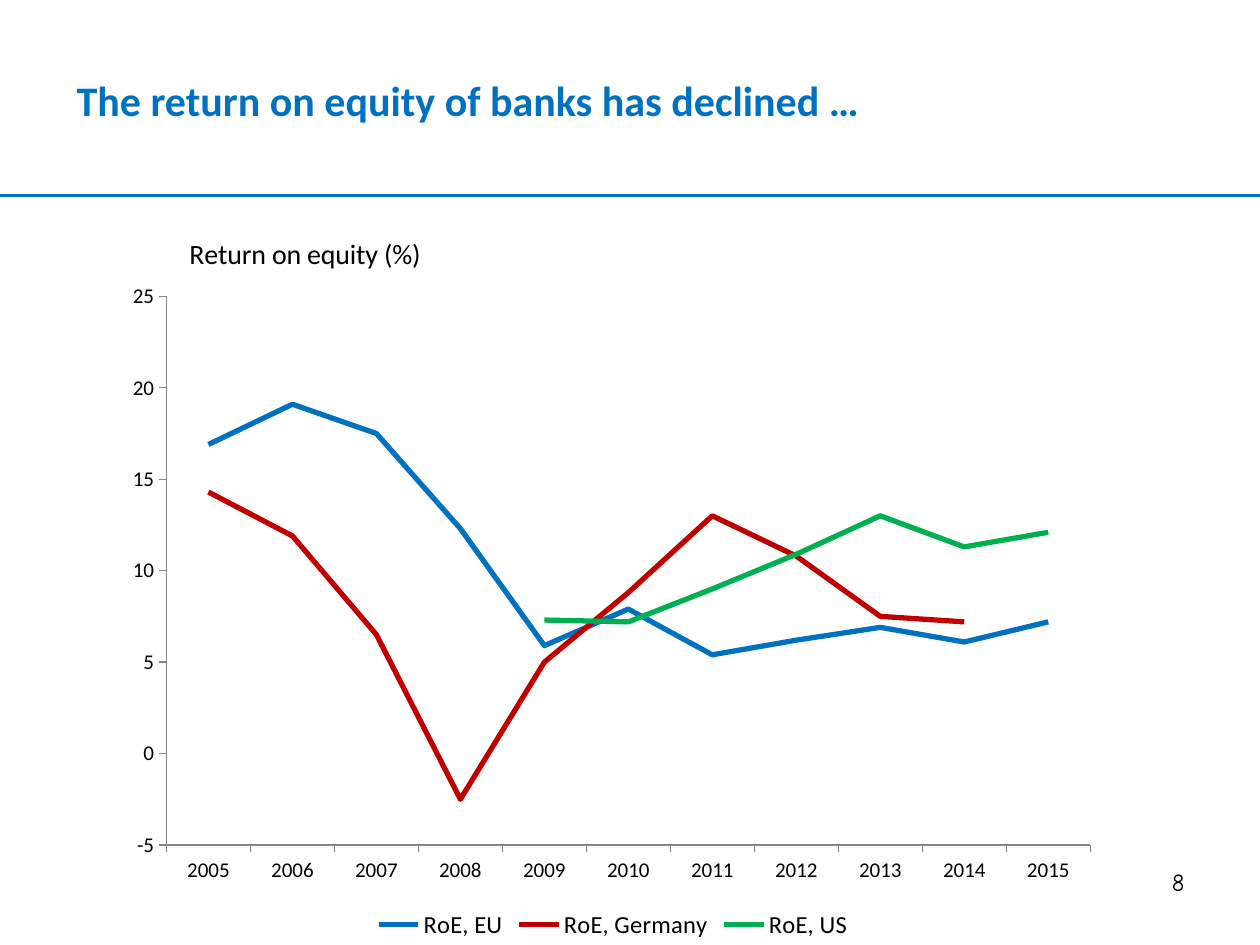
from dataclasses import dataclass

from lxml.etree import SubElement
from pptx import Presentation
from pptx.chart.data import CategoryChartData
from pptx.dml.color import RGBColor
from pptx.enum.chart import XL_AXIS_CROSSES as Crosses
from pptx.enum.chart import XL_CHART_TYPE as ChartType
from pptx.enum.chart import XL_LEGEND_POSITION as LegendPosition
from pptx.enum.chart import XL_TICK_LABEL_POSITION as LabelPosition
from pptx.enum.chart import XL_TICK_MARK as TickMark
from pptx.enum.shapes import MSO_CONNECTOR as Connector
from pptx.enum.text import MSO_ANCHOR as Anchor
from pptx.enum.text import PP_ALIGN as Align
from pptx.oxml import parse_xml
from pptx.oxml.ns import nsdecls, qn
from pptx.util import Inches, Pt

BLUE = RGBColor(0x00, 0x70, 0xC0)
RED = RGBColor(0xC0, 0x00, 0x00)
GREEN = RGBColor(0x00, 0xB0, 0x50)
BLACK = RGBColor(0x00, 0x00, 0x00)
GRAY = RGBColor(0x86, 0x86, 0x86)
BODY_FONT = "Calibri"
NUMBER_FONT = "Comic Neue"
YEARS = [str(year) for year in range(2005, 2016)]


@dataclass
class Region:
    name: str
    color: RGBColor
    returns: list[float | None]


@dataclass
class Label:
    text: str
    left: float
    top: float
    width: float
    height: float
    size: int
    font: str
    color: RGBColor
    bold: bool = False
    align: Align = Align.LEFT
    anchor: Anchor = Anchor.TOP


REGIONS = [
    Region("RoE, EU", BLUE,
           [16.9, 19.1, 17.5, 12.3, 5.9, 7.9, 5.4, 6.2, 6.9, 6.1, 7.2]),
    Region("RoE, Germany", RED,
           [14.3, 11.9, 6.5, -2.5, 5, 8.8, 13, 10.8, 7.5, 7.2, None]),
    Region("RoE, US", GREEN,
           [None] * 4 + [7.3, 7.2, 9, 10.9, 13, 11.3, 12.1]),
]
LABELS = [
    Label("The return on equity of banks has declined …", 0.51, 0.13, 8.74, 1.33,
          24, BODY_FONT, BLUE, bold=True, anchor=Anchor.MIDDLE),
    Label("8", 7.17, 6.83, 2.33, 0.52, 14, NUMBER_FONT, BLACK, align=Align.RIGHT),
]


def style_font(font, size: int, name: str = BODY_FONT,
               color: RGBColor = BLACK, bold: bool = False) -> None:
    font.size = Pt(size)
    font.name = name
    font.bold = bold
    font.color.rgb = color


def add_label(page, label: Label) -> None:
    box = page.shapes.add_textbox(Inches(label.left), Inches(label.top),
                                  Inches(label.width), Inches(label.height))
    frame = box.text_frame
    frame.word_wrap = True
    frame.vertical_anchor = label.anchor
    para = frame.paragraphs[0]
    para.alignment = label.align
    span = para.add_run()
    span.text = label.text
    style_font(span.font, label.size, label.font, label.color, label.bold)


def add_divider(page) -> None:
    line = page.shapes.add_connector(Connector.STRAIGHT, Inches(0), Inches(1.55),
                                     Inches(10), Inches(1.55))
    line.line.color.rgb = BLUE
    line.line.width = Pt(2)
    SubElement(line._element.spPr, qn("a:effectLst"))


def manual_layout(x: float, y: float, size: tuple[float, float] | None = None):
    """Place a chart part by fractions of the chart's width and height."""
    parts = [("xMode", "edge"), ("yMode", "edge"), ("x", x), ("y", y)]
    if size:
        parts = [("layoutTarget", "inner"), *parts, ("w", size[0]), ("h", size[1])]
    body = "".join(f'<c:{tag} val="{value}"/>' for tag, value in parts)
    return parse_xml(f"<c:layout {nsdecls('c')}><c:manualLayout>{body}"
                     "</c:manualLayout></c:layout>")


def style_axis(axis) -> None:
    axis.has_major_gridlines = False
    axis.major_tick_mark = TickMark.OUTSIDE
    axis.minor_tick_mark = TickMark.NONE
    axis.format.line.color.rgb = GRAY
    axis.format.line.width = Pt(0.75)
    style_font(axis.tick_labels.font, 12)


def add_return_chart(page) -> None:
    data = CategoryChartData(number_format="General")
    data.categories = YEARS
    for region in REGIONS:
        data.add_series(region.name, region.returns)
    chart = page.shapes.add_chart(ChartType.LINE, Inches(0.91), Inches(1.59),
                                  Inches(7.91), Inches(5.91), data).chart
    style_font(chart.font, 10, NUMBER_FONT)

    chart.has_title = True
    span = chart.chart_title.text_frame.paragraphs[0].add_run()
    span.text = "Return on equity (%)"
    style_font(span.font, 16)
    title = chart.chart_title._element
    for layout in title.findall(qn("c:layout")):
        title.remove(layout)
    title.find(qn("c:tx")).addnext(manual_layout(0.07, 0.04))
    chart.chart_title.include_in_layout = False

    plot_area = chart._chartSpace.chart.plotArea
    for layout in plot_area.findall(qn("c:layout")):
        plot_area.remove(layout)
    plot_area.insert(0, manual_layout(0.052, 0.129, (0.927, 0.737)))

    for axis in (chart.category_axis, chart.value_axis):
        style_axis(axis)
    chart.category_axis.tick_label_position = LabelPosition.LOW
    values = chart.value_axis
    values.minimum_scale, values.maximum_scale, values.major_unit = -5, 25, 5
    values.crosses = Crosses.MINIMUM

    chart.has_legend = True
    chart.legend.position = LegendPosition.BOTTOM
    chart.legend.include_in_layout = False
    style_font(chart.legend.font, 14)

    plot = chart.plots[0]
    plot.vary_by_categories = False
    for series, region in zip(plot.series, REGIONS):
        series.smooth = False
        series.format.line.color.rgb = region.color
        series.format.line.width = Pt(3)


def main() -> None:
    deck = Presentation()
    deck.slide_width, deck.slide_height = Inches(10), Inches(7.5)
    page = deck.slides.add_slide(deck.slide_layouts[6])
    add_divider(page)
    for label in LABELS:
        add_label(page, label)
    add_return_chart(page)
    deck.save("out.pptx")


if __name__ == "__main__":
    main()
